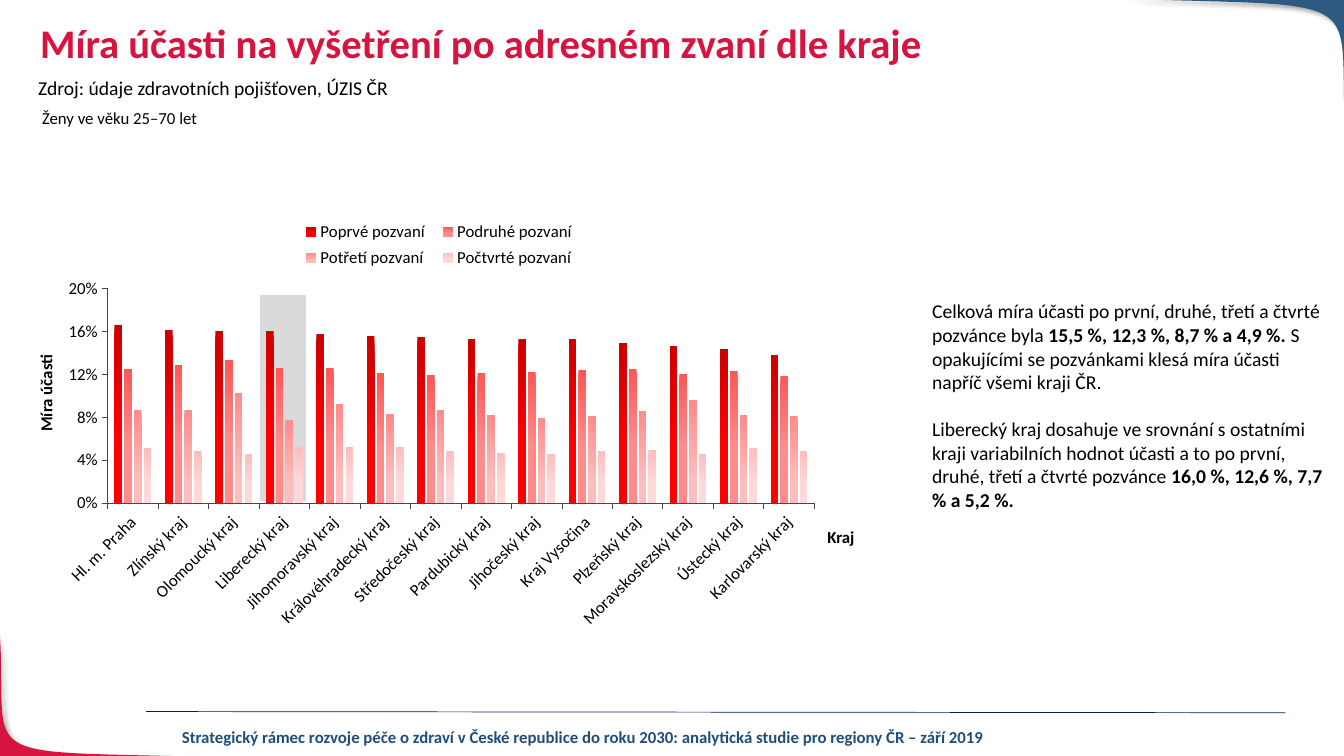
from dataclasses import dataclass
from lxml.etree import SubElement
from pptx import Presentation
from pptx.chart.data import CategoryChartData
from pptx.dml.color import RGBColor
from pptx.enum.chart import XL_CHART_TYPE, XL_LEGEND_POSITION, XL_TICK_MARK
from pptx.enum.shapes import MSO_CONNECTOR, MSO_SHAPE
from pptx.enum.text import MSO_ANCHOR, MSO_AUTO_SIZE, PP_ALIGN
from pptx.oxml import parse_xml
from pptx.oxml.ns import nsdecls, qn
from pptx.util import Cm, Pt


@dataclass(frozen=True)
class Theme:
    face: str = "Calibri"
    red: str = "D71440"
    blue: str = "2E5980"
    navy: str = "002060"
    foot: str = "1F4E79"
    ink: str = "000000"
    band: str = "DADADA"
    axis: str = "474747"
    head: int = 29
    body: int = 14
    note: int = 12


REGIONS = ["Hl. m. Praha", "Zlínský kraj", "Olomoucký kraj", "Liberecký kraj",
           "Jihomoravský kraj", "Královéhradecký kraj", "Středočeský kraj",
           "Pardubický kraj", "Jihočeský kraj", "Kraj Vysočina", "Plzeňský kraj",
           "Moravskoslezský kraj", "Ústecký kraj", "Karlovarský kraj"]
ROUNDS = [
    ("Poprvé pozvaní", ("CC0000", "FF0000", 0.65),
     [0.166, 0.161, 0.16, 0.16, 0.158, 0.156, 0.155,
      0.153, 0.153, 0.153, 0.149, 0.146, 0.144, 0.138]),
    ("Podruhé pozvaní", ("FF5757", "FF8B8B", 0.57),
     [0.125, 0.129, 0.133, 0.126, 0.126, 0.121, 0.119,
      0.121, 0.122, 0.124, 0.125, 0.12, 0.123, 0.118]),
    ("Potřetí pozvaní", ("FF8B8B", "FFBDBD", 0.78),
     [0.087, 0.087, 0.103, 0.077, 0.092, 0.083, 0.087,
      0.082, 0.079, 0.081, 0.086, 0.096, 0.082, 0.081]),
    ("Počtvrté pozvaní", ("FFBDBD", "FFD9D9", 0.66),
     [0.051, 0.048, 0.046, 0.052, 0.052, 0.052, 0.048,
      0.047, 0.046, 0.048, 0.049, 0.046, 0.051, 0.048]),
]


def apply(target, values):
    for name, value in values.items():
        setattr(target, name, value)


def place(box):
    return [Cm(v) for v in box]


def curve(points, steps=40):
    for i in range(steps + 1):
        t = i / steps
        parts = ((1 - t) ** 3, 3 * t * (1 - t) ** 2, 3 * t * t * (1 - t), t ** 3)
        yield tuple(Cm(sum(w * p[k] for w, p in zip(parts, points))) for k in (0, 1))


def layout(parent, index, box, inner=False):
    for old in parent.findall(qn("c:layout")):
        parent.remove(old)
    root = parse_xml(f'<c:layout {nsdecls("c")}><c:manualLayout/></c:layout>')
    pairs = [("layoutTarget", "inner")] if inner else []
    pairs += [("xMode", "edge"), ("yMode", "edge"), *zip("xywh", box)]
    for tag, value in pairs:
        SubElement(root[0], qn(f"c:{tag}")).set("val", str(value))
    parent.insert(index, root)


class Page:
    def __init__(self, deck, theme):
        self.theme = theme
        self.slide = deck.slides.add_slide(deck.slide_layouts[5])
        self.shapes = self.slide.shapes

    def font(self, font, size, color, bold=False):
        apply(font, {"name": self.theme.face, "size": Pt(size), "bold": bold})
        font.color.rgb = RGBColor.from_string(color)

    def fill(self, frame, paras, size, color, bold=False, align=PP_ALIGN.LEFT):
        apply(frame, {"word_wrap": True, "auto_size": MSO_AUTO_SIZE.NONE,
                      "vertical_anchor": MSO_ANCHOR.TOP})
        for i, runs in enumerate(paras):
            para = frame.add_paragraph() if i else frame.paragraphs[0]
            para.alignment = align
            if i:
                para.space_before = Pt(size * 1.2)
            for text, strong in runs:
                run = para.add_run()
                run.text = text
                self.font(run.font, size, color, bold or strong)

    def title(self, text, box):
        shape = self.shapes.title
        apply(shape, dict(zip(("left", "top", "width", "height"), place(box))))
        self.fill(shape.text_frame, [[(text, True)]], self.theme.head, self.theme.red)
        shape.text_frame.paragraphs[0].line_spacing = 0.9

    def text(self, paras, box, size, color=None, turn=0, **style):
        if isinstance(paras, str):
            paras = [[(paras, False)]]
        shape = self.shapes.add_textbox(*place(box))
        shape.rotation = turn
        self.fill(shape.text_frame, paras, size, color or self.theme.ink, **style)

    def corner(self, points, tip, color):
        start, *rest = curve(points)
        form = self.shapes.build_freeform(*start)
        form.add_line_segments([*rest, tuple(place(tip))], close=True)
        shape = form.convert_to_shape()
        shape.fill.solid()
        shape.fill.fore_color.rgb = RGBColor.from_string(color)
        shape.line.fill.background()
        shape._element.spPr.append(parse_xml(
            f'<a:effectLst {nsdecls("a")}><a:outerShdw blurRad="50800" dist="38100" '
            'dir="2700000"><a:srgbClr val="000000"><a:alpha val="40000"/>'
            '</a:srgbClr></a:outerShdw></a:effectLst>'))

    def rect(self, box, color):
        shape = self.shapes.add_shape(MSO_SHAPE.RECTANGLE, *place(box))
        shape.shadow.inherit = False
        shape.fill.solid()
        tone = RGBColor.from_string(color)
        shape.fill.fore_color.rgb = tone
        shape.line.color.rgb = tone
        shape.line.width = Pt(1)

    def line(self, ends, color):
        rule = self.shapes.add_connector(MSO_CONNECTOR.STRAIGHT, *place(ends))
        rule.line.color.rgb = RGBColor.from_string(color)
        rule.line.width = Pt(0.5)
        SubElement(rule._element.spPr, qn("a:effectLst"))

    def chart(self, cats, series, box):
        look = self.theme
        data = CategoryChartData(number_format="0.0%")
        data.categories = cats
        for name, _, values in series:
            data.add_series(name, values)
        chart = self.shapes.add_chart(
            XL_CHART_TYPE.COLUMN_CLUSTERED, *place(box), data).chart
        apply(chart, {"has_title": False, "has_legend": True})
        self.font(chart.font, look.note, look.ink)
        apply(chart.legend, {"position": XL_LEGEND_POSITION.BOTTOM,
                             "include_in_layout": False})
        self.font(chart.legend.font, look.note, look.ink)
        layout(chart.legend._element, 1, (0.32, 0.03, 0.37, 0.12))
        layout(chart._chartSpace.chart.plotArea, 0, (0.083, 0.18, 0.9, 0.443), True)
        for axis in (chart.category_axis, chart.value_axis):
            apply(axis, {"has_major_gridlines": False,
                         "major_tick_mark": XL_TICK_MARK.OUTSIDE,
                         "minor_tick_mark": XL_TICK_MARK.NONE})
            self.font(axis.tick_labels.font, look.note, look.ink)
            axis.format.line.color.rgb = RGBColor.from_string(look.axis)
            axis.format.line.width = Pt(0.5)
        chart.category_axis._element.find(qn("c:txPr"))[0].set("rot", "-2700000")
        apply(chart.value_axis, {"minimum_scale": 0, "maximum_scale": 0.2,
                                 "major_unit": 0.04})
        apply(chart.value_axis.tick_labels, {"number_format": "0%",
                                             "number_format_is_linked": False})
        plot = chart.plots[0]
        apply(plot, {"gap_width": 180, "overlap": -27, "vary_by_categories": False})
        for bars, (_, (top, low, stop), _) in zip(plot.series, series):
            fill = bars.format.fill
            fill.gradient()
            fill.gradient_angle = 270
            for mark, tone, spot in zip(fill.gradient_stops, (top, low), (0, stop)):
                mark.color.rgb = RGBColor.from_string(tone)
                mark.position = spot


def main():
    deck = Presentation()
    apply(deck, {"slide_width": Cm(33.87), "slide_height": Cm(19.05)})
    look = Theme()
    page = Page(deck, look)
    page.corner([(5.41, 19.08), (-0.86, 18.9), (0.2, 19.28), (0, 16)],
                (-0.03, 19.08), look.red)
    page.corner([(28.22, -0.03), (34.8, 0.18), (33.68, -0.25), (33.91, 3.61)],
                (33.91, -0.03), look.blue)
    page.line((3.68, 17.93, 32.39, 17.96), look.navy)
    page.text("Strategický rámec rozvoje péče o zdraví v České republice do roku 2030: "
              "analytická studie pro regiony ČR – září 2019",
              (3.99, 18.19, 21.41, 0.76), look.note, look.foot,
              bold=True, align=PP_ALIGN.CENTER)
    page.rect((6.58, 7.44, 1.12, 5.18), look.band)
    page.chart(REGIONS, ROUNDS, (1.07, 5.08, 19.79, 12.19))
    page.text([
        [("Celková míra účasti po první, druhé, třetí a čtvrté pozvánce byla ", False),
         ("15,5 %, 12,3 %, 8,7 % a 4,9 %. ", True),
         ("S opakujícími se pozvánkami klesá míra účasti napříč všemi kraji ČR.", False)],
        [("Liberecký kraj dosahuje ve srovnání s ostatními kraji variabilních hodnot "
          "účasti a to po první, druhé, třetí a čtvrté pozvánce", False),
         (" 16,0 %, 12,6 %, 7,7 % a 5,2 %.", True)],
    ], (23.24, 7.42, 10.62, 5.64), look.body)
    page.text("Zdroj: údaje zdravotních pojišťoven, ÚZIS ČR",
              (0.71, 1.8, 21.51, 0.86), look.body)
    page.text("Kraj", (20.6, 13.16, 2.74, 0.71), look.note, bold=True)
    page.text("Ženy ve věku 25–70 let", (0.81, 2.59, 18.64, 0.76), look.note)
    page.title("Míra účasti na vyšetření po adresném zvaní dle kraje",
               (0.76, 0.46, 29.21, 1.75))
    page.text("Míra účasti", (-1.5, 9.45, 5.46, 0.91), look.note, turn=270,
              bold=True, align=PP_ALIGN.CENTER)
    deck.save("out.pptx")


if __name__ == "__main__":
    main()
